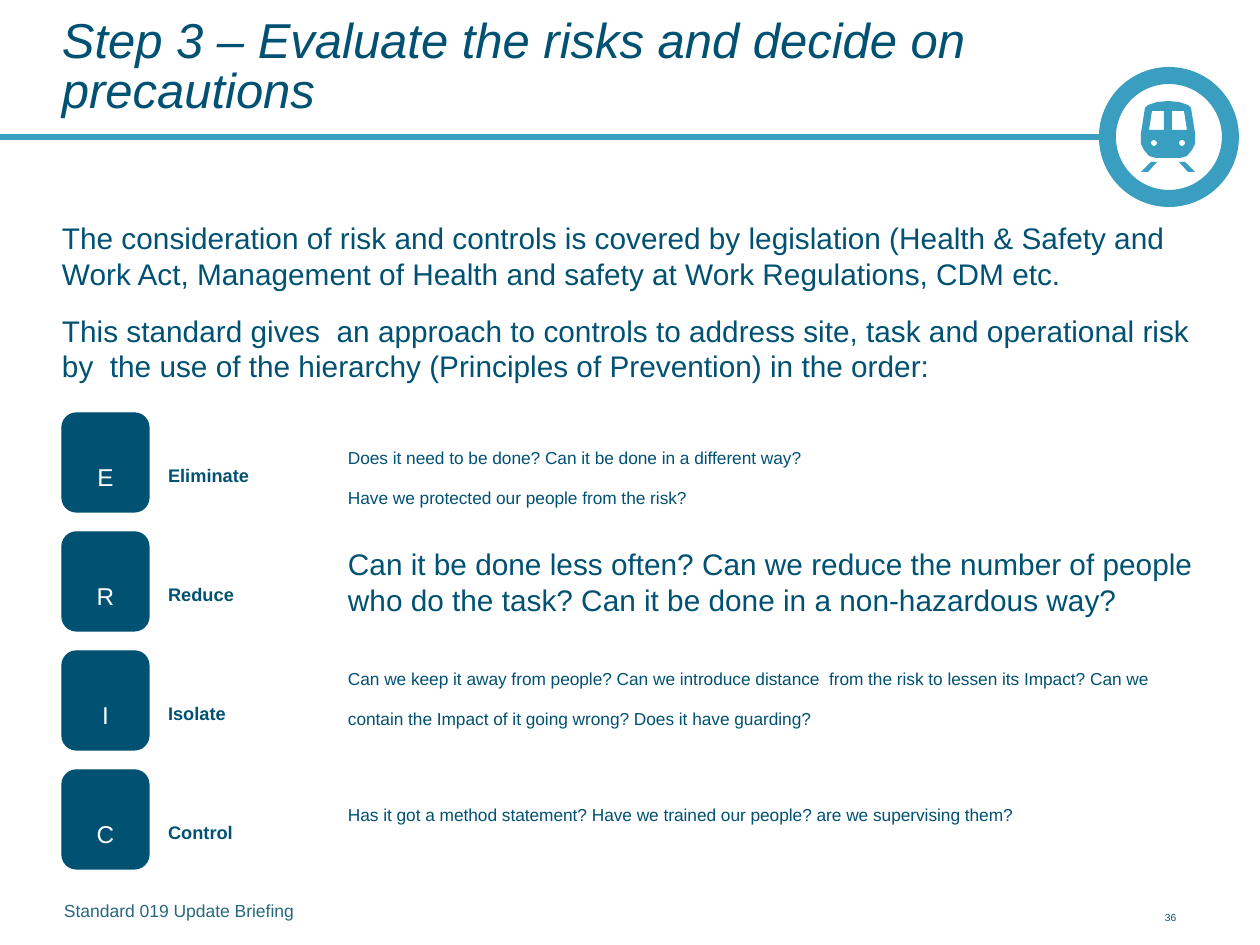
from dataclasses import dataclass
from math import cos, pi, sin

from pptx import Presentation
from pptx.dml.color import RGBColor as RGB
from pptx.enum.shapes import MSO_CONNECTOR as Conn, MSO_SHAPE as Shape
from pptx.enum.text import MSO_ANCHOR as Anchor, PP_ALIGN as Align
from pptx.oxml.ns import qn
from pptx.util import Pt

EMU_PER_PX = 914400 / 126


def px(n):
    return round(n * EMU_PER_PX)


@dataclass(frozen=True)
class Theme:
    font: str = "Arial"
    navy: RGB = RGB(0x00, 0x51, 0x72)
    sky: RGB = RGB(0x3A, 0x9E, 0xC0)
    footer: RGB = RGB(0x26, 0x69, 0x7E)
    white: RGB = RGB(0xFF, 0xFF, 0xFF)
    title_size: int = 28
    letter_size: int = 24
    label_size: int = 18
    body_size: int = 17
    small_size: int = 10


class SlideBuilder:
    def __init__(self, slide, theme):
        self.slide, self.theme = slide, theme

    def _write(self, tf, lines, size, color, bold=False, italic=False,
               lowered=False, after=0, spacing=None, align=Align.LEFT):
        """Fill a text frame; lowered sets the runs as subscript."""
        for i, line in enumerate(lines):
            p = tf.add_paragraph() if i else tf.paragraphs[0]
            p.alignment = align
            p.space_after = Pt(after)
            p.line_spacing = spacing
            p.font.name, p.font.size = self.theme.font, Pt(size)
            p.font.bold, p.font.italic = bold, italic
            p.font.color.rgb = color
            r = p.add_run()
            r.text = line
            if lowered:
                r._r.get_or_add_rPr().set("baseline", "-25000")

    def text(self, x, y, w, h, lines, size, color=None,
             anchor=Anchor.TOP, **style):
        sp = self.slide.shapes.add_textbox(px(x), px(y), px(w), px(h))
        tf = sp.text_frame
        tf.word_wrap = True
        tf.vertical_anchor = anchor
        tf.margin_left = tf.margin_right = tf.margin_top = tf.margin_bottom = 0
        self._write(tf, lines, size, color or self.theme.navy, **style)

    def _paint(self, sp, color, outlined=False):
        sp.shadow.inherit = False
        sp.fill.solid()
        sp.fill.fore_color.rgb = color
        if outlined:
            sp.line.color.rgb = color
            sp.line.width = Pt(0.75)
        else:
            sp.line.fill.background()

    def tile(self, x, y, w, h, letter):
        sp = self.slide.shapes.add_shape(
            Shape.ROUNDED_RECTANGLE, px(x), px(y), px(w), px(h))
        self._paint(sp, self.theme.navy, outlined=True)
        tf = sp.text_frame
        tf.word_wrap = False
        tf.vertical_anchor = Anchor.MIDDLE
        self._write(tf, [letter], self.theme.letter_size, self.theme.white,
                    lowered=True, align=Align.CENTER)

    def rule(self, x1, y1, x2, y2, width):
        ln = self.slide.shapes.add_connector(
            Conn.STRAIGHT, px(x1), px(y1), px(x2), px(y2))
        ln.line.color.rgb = self.theme.sky
        ln.line.width = Pt(width)
        sp_pr = ln._element.spPr
        sp_pr.append(sp_pr.makeelement(qn("a:effectLst"), {}))

    def ring(self, x, y, size, thickness):
        sp = self.slide.shapes.add_shape(
            Shape.DONUT, px(x), px(y), px(size), px(size))
        sp.adjustments[0] = thickness / size
        self._paint(sp, self.theme.sky)

    def outline(self, contours):
        """Draw one filled shape; later contours inside the first are holes."""
        (x, y), *rest = contours[0]
        fb = self.slide.shapes.build_freeform(x, y, EMU_PER_PX)
        fb.add_line_segments(rest, close=True)
        for (x, y), *rest in contours[1:]:
            fb.move_to(x, y)
            fb.add_line_segments(rest, close=True)
        self._paint(fb.convert_to_shape(), self.theme.sky)

    def train(self, cx):
        """Draw a front view, symmetric about the vertical line at cx."""
        def side(points, sign):
            return [(cx + sign * dx, y) for dx, y in points]

        half = [(0, 101), (11, 102), (20, 105), (23, 108), (27, 133),
                (27, 144), (24, 150), (19, 156), (12, 158), (0, 158)]
        window = [(4, 111), (16, 111), (19, 130), (4, 130)]
        lamp = [(14 + 3 * cos(k * pi / 8), 143 + 3 * sin(k * pi / 8))
                for k in range(16)]
        rail = [(11, 162), (17, 162), (27, 172), (20, 172)]
        body = side(half, 1) + side(half[-2:0:-1], -1)
        self.outline([body] + [side(hole, sign)
                               for hole in (window, lamp) for sign in (-1, 1)])
        for sign in (-1, 1):
            self.outline([side(rail, sign)])


TITLE = "Step 3 – Evaluate the risks and decide on precautions"
INTRO = [
    "The consideration of risk and controls is covered by legislation (Health "
    "& Safety and Work Act, Management of Health and safety at Work "
    "Regulations, CDM etc.",
    "This standard gives  an approach to controls to address site, task and "
    "operational risk by  the use of the hierarchy (Principles of Prevention) "
    "in the order:",
]
# label, offset of the questions from the tile top, lowered, questions
STEPS = [
    ("Eliminate", 14, True,
     ["Does it need to be done? Can it be done in a different way?",
      "Have we protected our people from the risk?"]),
    ("Reduce", 14, False,
     ["Can it be done less often? Can we reduce the number of people who do "
      "the task? Can it be done in a non-hazardous way?"]),
    ("Isolate", -3, True,
     ["Can we keep it away from people? Can we introduce distance  from the "
      "risk to lessen its Impact? Can we contain the Impact of it going "
      "wrong? Does it have guarding?"]),
    ("Control", 14, True,
     ["Has it got a method statement? Have we trained our people? are we "
      "supervising them?"]),
]
LEFT, STEP_TOP, STEP_PITCH = 62, 413, 119


def main():
    prs = Presentation()
    prs.slide_width, prs.slide_height = px(1260), px(945)
    theme = Theme()
    s = SlideBuilder(prs.slides.add_slide(prs.slide_layouts[6]), theme)

    s.rule(0, 137, 1106, 137, 3)
    s.ring(1099, 67, 140, 17)
    s.train(1168)
    s.text(LEFT, 25, 998, 88, [TITLE], theme.title_size, italic=True,
           anchor=Anchor.MIDDLE, spacing=0.85)
    s.text(LEFT, 220, 1144, 168, INTRO, theme.body_size, after=12)

    for i, (label, offset, lowered, questions) in enumerate(STEPS):
        y = STEP_TOP + i * STEP_PITCH
        # the steps are known by their first letters
        s.tile(LEFT, y, 87, 99, label[0])
        s.text(168, y + 30, 155, 39, [label], theme.label_size,
               bold=True, lowered=True)
        s.text(348, y + offset, 858, 72, questions, theme.body_size,
               lowered=lowered)

    s.text(64, 900, 1090, 30, ["Standard 019 Update Briefing"],
           theme.small_size, theme.footer)
    s.text(1165, 900, 62, 30, ["36"], theme.small_size, lowered=True)
    prs.save("out.pptx")


if __name__ == "__main__":
    main()
